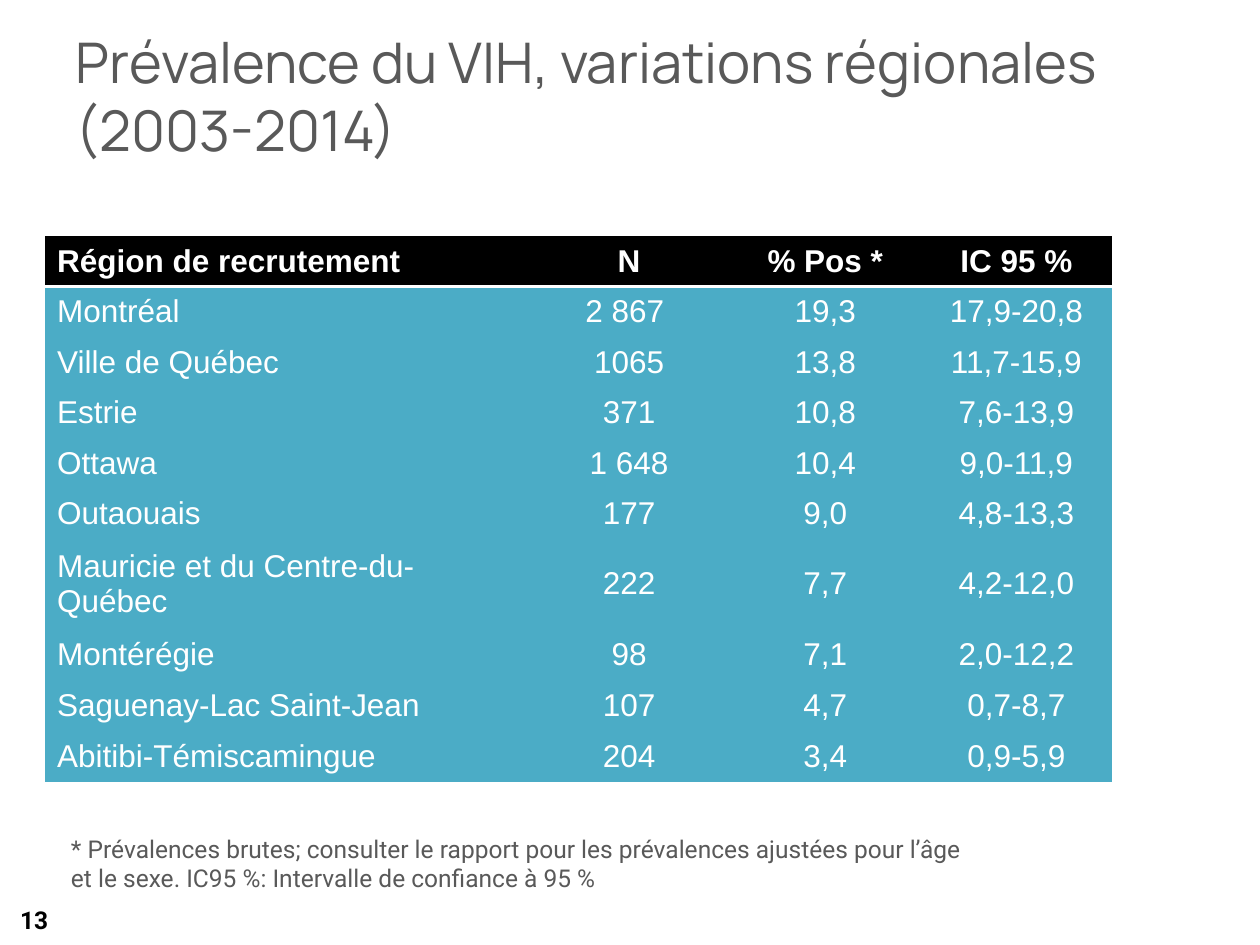
"""Build the slide on regional variations in HIV prevalence."""
from lxml.etree import SubElement
from pptx import Presentation
from pptx.dml.color import RGBColor
from pptx.enum.text import MSO_ANCHOR, MSO_AUTO_SIZE, PP_ALIGN
from pptx.oxml import parse_xml
from pptx.oxml.ns import qn
from pptx.util import Pt

TITLE = "Prévalence du VIH, variations régionales (2003-2014)"
NOTE = ("* Prévalences brutes; consulter le rapport pour les prévalences ajustées pour l’âge "
        "et le sexe. IC95 %: Intervalle de confiance à 95 %")
PAGE = "13"
ROWS = [
    ("Région de recrutement", "N", "% Pos *", "IC 95 %"),
    ("Montréal", "2 867 ", "19,3", "17,9-20,8"),
    ("Ville de Québec", "1065", "13,8", "11,7-15,9"),
    ("Estrie", "371", "10,8", "7,6-13,9"),
    ("Ottawa", "1 648", "10,4", "9,0-11,9"),
    ("Outaouais", "177", "9,0", "4,8-13,3"),
    ("Mauricie et du Centre-du-Québec", "222", "7,7", "4,2-12,0"),
    ("Montérégie", "98", "7,1", "2,0-12,2"),
    ("Saguenay-Lac Saint-Jean", "107", "4,7", "0,7-8,7"),
    ("Abitibi-Témiscamingue", "204", "3,4", "0,9-5,9"),
]
COL_W = [276.5, 115, 109.2, 109.2]
ROW_H = {6: 51.5, 7: 29.5}
BASE_H = 28.6
BLACK, WHITE, GREY, TEAL = "000000", "FFFFFF", "595959", "4BACC6"
NO_GRID = "{2D5ABB26-0587-4C30-8999-92F81FD0307C}"
NS = "http://schemas.openxmlformats.org/drawingml/2006/main"


def rgb(value):
    return RGBColor.from_string(value)


def write(tf, text, font, size, color, bold=False, align=PP_ALIGN.LEFT):
    p = tf.paragraphs[0]
    p.alignment = align
    r = p.add_run()
    r.text = text
    r.font.name, r.font.size, r.font.bold = font, Pt(size), bold
    r.font.color.rgb = rgb(color)
    return p


def add_text(s, box, *args, anchor=MSO_ANCHOR.TOP, **kwargs):
    tf = s.shapes.add_textbox(*map(Pt, box)).text_frame
    tf.word_wrap = True
    tf.vertical_anchor = anchor
    return write(tf, *args, **kwargs)


def add_title(s):
    sp = s.shapes.title
    sp.left, sp.top, sp.width, sp.height = map(Pt, (36, 9.4, 648, 90))
    tf = sp.text_frame
    tf.auto_size = MSO_AUTO_SIZE.NONE
    tf.vertical_anchor = MSO_ANCHOR.MIDDLE
    write(tf, TITLE, "Manrope", 32, GREY)


def underline(cell):
    line = parse_xml(f'<a:lnB xmlns:a="{NS}" w="{Pt(2)}"/>')
    fill = SubElement(line, qn("a:solidFill"))
    SubElement(fill, qn("a:srgbClr"), val=WHITE)
    cell._tc.get_or_add_tcPr().insert(0, line)


def add_prevalence_table(s):
    heights = [ROW_H.get(i, BASE_H) for i in range(len(ROWS))]
    frame = s.shapes.add_table(len(ROWS), len(COL_W), Pt(25.5), Pt(135),
                               Pt(sum(COL_W)), Pt(sum(heights)))
    table = frame.table
    table.horz_banding = False
    table._tbl.tblPr.find(qn("a:tableStyleId")).text = NO_GRID
    for col, width in zip(table.columns, COL_W):
        col.width = Pt(width)
    for i, (row, height, texts) in enumerate(zip(table.rows, heights, ROWS)):
        row.height = Pt(height)
        head = i == 0
        for j, (cell, text) in enumerate(zip(row.cells, texts)):
            cell.fill.solid()
            cell.fill.fore_color.rgb = rgb(BLACK if head else TEAL)
            cell.vertical_anchor = MSO_ANCHOR.MIDDLE
            write(cell.text_frame, text, "Arial", 18, WHITE, head,
                  PP_ALIGN.CENTER if j else PP_ALIGN.LEFT)
            if head:
                underline(cell)


def main():
    prs = Presentation()
    prs.slide_width, prs.slide_height = Pt(720), Pt(540)
    s = prs.slides.add_slide(prs.slide_layouts[5])
    add_title(s)
    add_text(s, (0, 511.2, 34.6, 28.8), PAGE, "Roboto", 14, BLACK, bold=True,
             align=PP_ALIGN.RIGHT, anchor=MSO_ANCHOR.MIDDLE)
    add_prevalence_table(s)
    p = add_text(s, (20, 473, 540, 42), NOTE, "Roboto", 14, GREY)
    p._p.get_or_add_pPr().set("marL", str(Pt(13.5)))
    prs.save("out.pptx")


if __name__ == "__main__":
    main()
